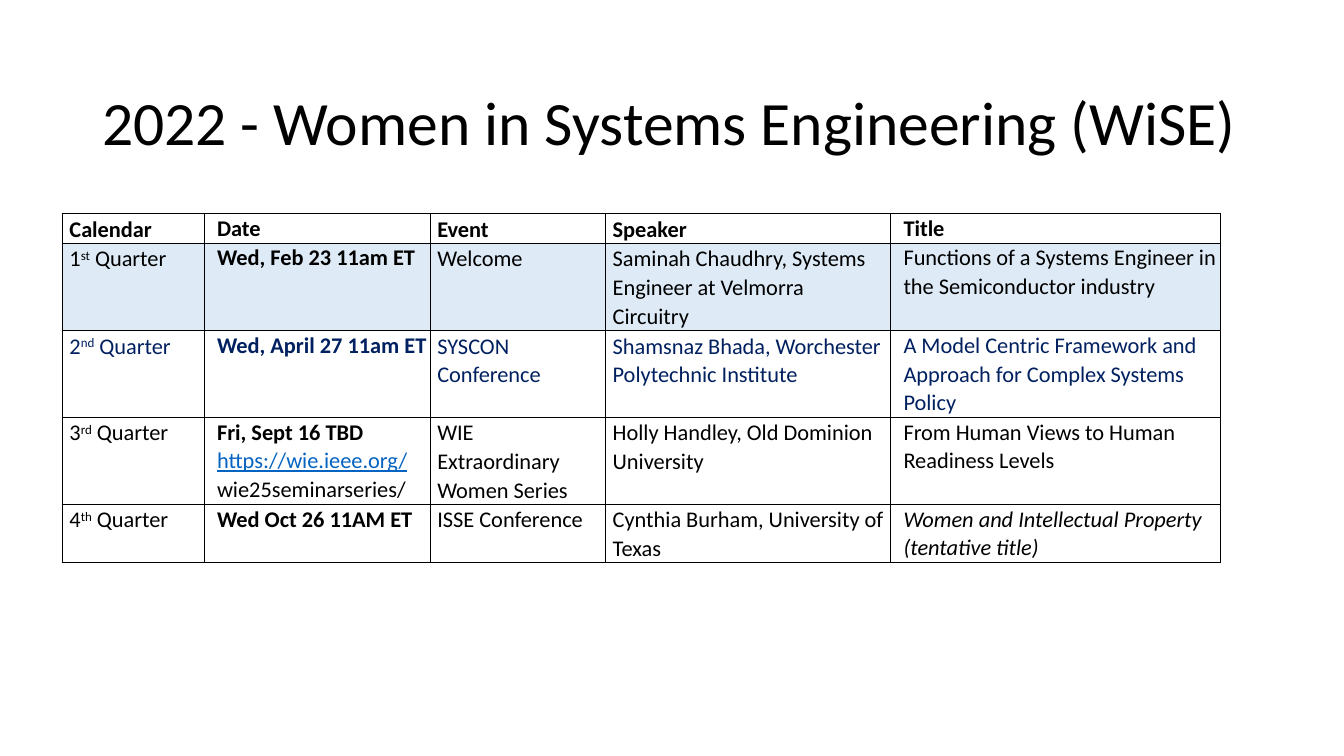
from dataclasses import dataclass, field

from lxml.etree import SubElement
from pptx import Presentation
from pptx.dml.color import RGBColor
from pptx.enum.text import MSO_ANCHOR as Anchor
from pptx.oxml import parse_xml
from pptx.oxml.ns import nsdecls, qn
from pptx.util import Cm, Pt

COLORS = {
    "black": "000000",
    "navy": "002060",
    "link": "0563C1",
    "pale_blue": "DEEBF7",
}
FONT = "Calibri"
COLUMN_WIDTHS = (3.58, 5.69, 4.42, 7.19, 8.31)
INDENTED_COLUMNS = (1, 4)
INDENT = Cm(0.32)
PLAIN_MARGINS = {"margin_left": Cm(0.18), "margin_top": Cm(0.02),
                 "margin_right": Cm(0.18), "margin_bottom": 0}
ZERO_MARGINS = dict.fromkeys(PLAIN_MARGINS, 0)


@dataclass
class Piece:
    """A stretch of text with its own format."""
    text: str
    format: dict = field(default_factory=dict)
    color: str | None = None
    raised: bool = False


@dataclass
class Quarter:
    """One row of the calendar; each cell is a list of lines made of pieces."""
    cells: list[list[list[Piece]]]
    height: float
    color: str = "black"
    fill: str | None = None


def line(text: str, color: str | None = None, **format_values) -> list[Piece]:
    return [Piece(text, format_values, color)]


def ordinal(number: str, suffix: str) -> list[Piece]:
    return [Piece(number), Piece(suffix, raised=True), Piece(" Quarter")]


HEADINGS = ("Calendar", "Date", "Event", "Speaker", "Title")
QUARTERS = [
    Quarter([[line(heading, bold=True)] for heading in HEADINGS], 0.74),
    Quarter([
        [ordinal("1", "st")],
        [line("Wed, Feb 23 11am ET", bold=True)],
        [line("Welcome")],
        [line("Saminah Chaudhry, Systems Engineer at Velmorra Circuitry")],
        [line("Functions of a Systems Engineer in the Semiconductor industry")],
    ], 2.2, fill="pale_blue"),
    Quarter([
        [ordinal("2", "nd")],
        [line("Wed, April 27 11am ET", bold=True)],
        [line("SYSCON Conference")],
        [line("Shamsnaz Bhada, Worchester Polytechnic Institute")],
        [line("A Model Centric Framework and Approach for Complex Systems Policy")],
    ], 2.19, color="navy"),
    Quarter([
        [ordinal("3", "rd")],
        [line("Fri, Sept 16 TBD", bold=True),
         line("https://wie.ieee.org/", color="link", underline=True),
         line("wie25seminarseries/")],
        [line("WIE Extraordinary Women Series")],
        [line("Holly Handley, Old Dominion University")],
        [line("From Human Views to Human Readiness Levels")],
    ], 2.19),
    Quarter([
        [ordinal("4", "th")],
        [line("Wed Oct 26 11AM ET", bold=True)],
        [line("ISSE Conference")],
        [line("Cynthia Burham, University of Texas")],
        [line("Women and Intellectual Property (tentative title)", italic=True)],
    ], 1.47),
]


def set_values(target, values: dict) -> None:
    for name, value in values.items():
        setattr(target, name, value)


def add_pieces(paragraph, pieces: list[Piece], size: int, color: str) -> None:
    for piece in pieces:
        run = paragraph.add_run()
        run.text = piece.text
        set_values(run.font, {"name": FONT, "size": Pt(size), "bold": False,
                              **piece.format})
        run.font.color.rgb = RGBColor.from_string(COLORS[piece.color or color])
        if piece.raised:
            run.font._element.set("baseline", "30000")


def add_borders(cell) -> None:
    """Draw a thin black line on all four sides; borders precede the fill."""
    properties = cell._tc.get_or_add_tcPr()
    for position, side in enumerate(("lnL", "lnR", "lnT", "lnB")):
        border = parse_xml(f'<a:{side} {nsdecls("a")} w="{Pt(1)}"/>')
        fill = SubElement(border, qn("a:solidFill"))
        SubElement(fill, qn("a:srgbClr"), val=COLORS["black"])
        properties.insert(position, border)


def fill_cell(cell, lines: list[list[Piece]], quarter: Quarter,
              indented: bool) -> None:
    set_values(cell, ZERO_MARGINS if indented else PLAIN_MARGINS)
    cell.vertical_anchor = Anchor.TOP
    if quarter.fill:
        cell.fill.solid()
        cell.fill.fore_color.rgb = RGBColor.from_string(COLORS[quarter.fill])
    else:
        cell.fill.background()
    add_borders(cell)
    frame = cell.text_frame
    for index, pieces in enumerate(lines):
        paragraph = frame.add_paragraph() if index else frame.paragraphs[0]
        paragraph.line_spacing = 1.05
        if indented:
            paragraph._p.get_or_add_pPr().set("marL", str(INDENT))
        add_pieces(paragraph, pieces, 16, quarter.color)


def add_title(slide, text: str) -> None:
    box = slide.shapes.add_textbox(Cm(2.33), Cm(2.23), Cm(29.21), Cm(1.86))
    set_values(box.text_frame, {"word_wrap": True,
                                "vertical_anchor": Anchor.MIDDLE})
    paragraph = box.text_frame.paragraphs[0]
    paragraph.line_spacing = 0.9
    add_pieces(paragraph, line(text), 44, "black")


def add_calendar(slide) -> None:
    table = slide.shapes.add_table(
        len(QUARTERS), len(COLUMN_WIDTHS), Cm(1.57), Cm(5.39),
        Cm(sum(COLUMN_WIDTHS)), Cm(sum(quarter.height for quarter in QUARTERS)),
    ).table
    set_values(table, {"first_row": False, "horz_banding": False})
    for column, width in zip(table.columns, COLUMN_WIDTHS):
        column.width = Cm(width)
    for row, quarter in zip(table.rows, QUARTERS):
        row.height = Cm(quarter.height)
        for index, (cell, lines) in enumerate(zip(row.cells, quarter.cells)):
            fill_cell(cell, lines, quarter, index in INDENTED_COLUMNS)


def main() -> None:
    presentation = Presentation()
    set_values(presentation, {"slide_width": Cm(33.87),
                              "slide_height": Cm(19.05)})
    slide = presentation.slides.add_slide(presentation.slide_layouts[6])
    add_title(slide, "2022 - Women in Systems Engineering (WiSE)")
    add_calendar(slide)
    presentation.save("out.pptx")


if __name__ == "__main__":
    main()
